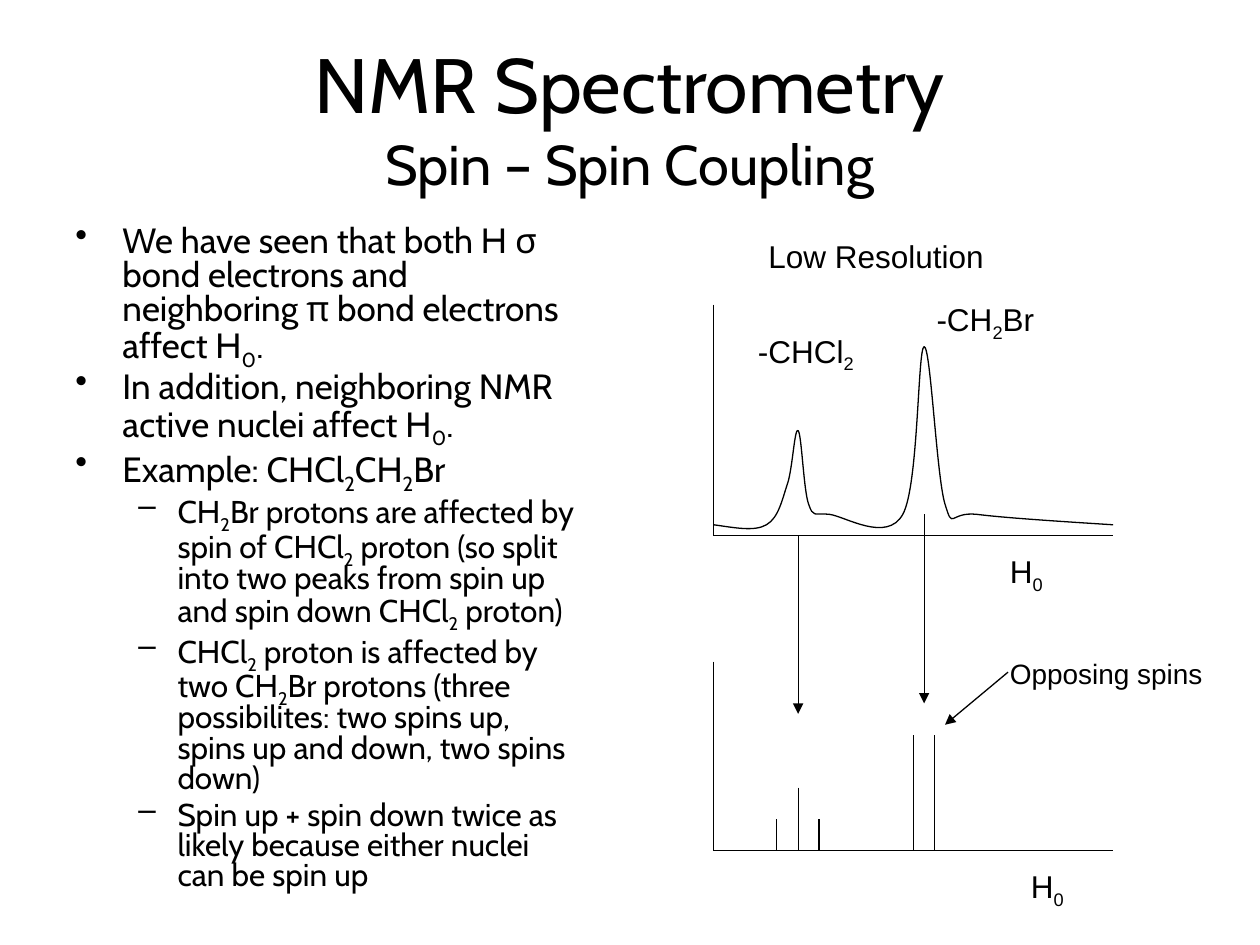
from lxml import etree
from pptx import Presentation
from pptx.dml.color import RGBColor
from pptx.enum.shapes import MSO_CONNECTOR
from pptx.enum.text import MSO_ANCHOR, PP_ALIGN
from pptx.oxml.ns import qn
from pptx.util import Cm, Pt

BLACK = RGBColor(0, 0, 0)
STRAIGHT = MSO_CONNECTOR.STRAIGHT
MIDDLE = MSO_ANCHOR.MIDDLE
CENTER = PP_ALIGN.CENTER
LINE_WIDTH = Pt(0.75)


def add_text_box(left, top, width, height):
    text_box = slide.shapes.add_textbox(Cm(left), Cm(top), Cm(width), Cm(height))
    text_box.text_frame.word_wrap = True
    return text_box.text_frame


def write_formula(paragraph, text, font_name, size):
    first, *rest = text.split("_")
    pieces = [(first, False)]
    for part in rest:
        pieces += [(part[0], True), (part[1:], False)]
    for piece, is_subscript in pieces:
        if piece:
            run = paragraph.add_run()
            run.text = piece
            run.font.name = font_name
            run.font.size = Pt(size)
            run.font.color.rgb = BLACK
            if is_subscript:
                run._r.get_or_add_rPr().set("baseline", "-25000")


presentation = Presentation()
presentation.slide_width = Cm(25.4)
presentation.slide_height = Cm(19.05)
slide = presentation.slides.add_slide(presentation.slide_layouts[6])

title_frame = add_text_box(1.27, 0.76, 22.86, 3.18)
title_frame.vertical_anchor = MIDDLE
title = title_frame.paragraphs[0]
title.text = "NMR Spectrometry\vSpin – Spin Coupling"
title.alignment = CENTER
for run, size in zip(title.runs, (44, 32)):
    run.font.name = "Cabin"
    run.font.size = Pt(size)
    run.font.color.rgb = BLACK

bullets = [
    (0, "We have seen that both H σ bond electrons and neighboring π bond electrons affect H_0."),
    (0, "In addition, neighboring NMR active nuclei affect H_0."),
    (0, "Example: CHCl_2CH_2Br"),
    (1, "CH_2Br protons are affected by spin of CHCl_2 proton "
        "(so split into two peaks from spin up and spin down CHCl_2 proton)"),
    (1, "CHCl_2 proton is affected by two CH_2Br protons "
        "(three possibilites: two spins up, spins up and down, two spins down)"),
    (1, "Spin up + spin down twice as likely because either nuclei can be spin up"),
]
bullet_styles = [("•", 20, 0.95, -0.95), ("–", 18, 2.06, -0.79)]
body_frame = add_text_box(1.27, 4.45, 10.58, 12.57)
for index, (level, text) in enumerate(bullets):
    character, size, margin, indent = bullet_styles[level]
    paragraph = body_frame.add_paragraph() if index else body_frame.paragraphs[0]
    paragraph.level = level
    paragraph.line_spacing = 0.8
    if index:
        paragraph.space_before = Pt(0.2 * size)
    properties = paragraph._p.get_or_add_pPr()
    properties.set("marL", str(Cm(margin)))
    properties.set("indent", str(Cm(indent)))
    etree.SubElement(properties, qn("a:buChar"), char=character)
    write_formula(paragraph, text, "Cabin", size)

labels = [
    ("Low Resolution", 15.24, 4.66, 6.77, 18),
    ("-CHCl_2", 15.03, 6.56, 2.75, 18),
    ("-CH_2Br", 18.63, 5.93, 2.75, 18),
    ("H_0", 20.11, 11.01, 2.12, 18),
    ("H_0", 20.53, 17.36, 2.12, 18),
    ("Opposing spins", 20.11, 13.12, 4.66, 16),
]
for text, left, top, width, size in labels:
    label_frame = add_text_box(left, top, width, 1.02)
    write_formula(label_frame.paragraphs[0], text, "Arial", size)

axis_left, axis_right = 14.39, 22.44
upper_base, lower_base = 10.8, 17.15
lines = []
for axis_top, base in ((6.14, upper_base), (13.34, lower_base)):
    lines.append((axis_left, axis_top, axis_left, base, False))
    lines.append((axis_left, base, axis_right, base, False))
split_peaks = [(15.66, 16.51), (16.09, 15.88), (16.51, 16.51), (18.42, 14.82), (18.84, 14.82)]
for x, top in split_peaks:
    lines.append((x, top, x, lower_base, False))
lines += [
    (16.09, upper_base, 16.09, 14.39, True),
    (18.63, 10.37, 18.63, 14.18, True),
    (20.32, 13.55, 19.05, 14.61, True),
]
for start_x, start_y, end_x, end_y, has_arrow in lines:
    connector = slide.shapes.add_connector(
        STRAIGHT, Cm(start_x), Cm(start_y), Cm(end_x), Cm(end_y))
    connector.line.color.rgb = BLACK
    connector.line.width = LINE_WIDTH
    if has_arrow:
        etree.SubElement(connector.line._get_or_add_ln(), qn("a:tailEnd"), type="triangle")
    etree.SubElement(connector._element.spPr, qn("a:effectLst"))

curve_start = (axis_left, 10.58)
curve_points = [
    (14.82, 10.64), (15.21, 10.72), (15.45, 10.58),
    (15.7, 10.44), (15.77, 10.06), (15.88, 9.74),
    (15.98, 9.42), (16.02, 8.61), (16.09, 8.68),
    (16.16, 8.74), (16.2, 9.88), (16.3, 10.16),
    (16.4, 10.44), (16.4, 10.34), (16.72, 10.37),
    (17.04, 10.41), (17.88, 10.95), (18.2, 10.37),
    (18.52, 9.8), (18.5, 7.01), (18.63, 6.99),
    (18.76, 6.96), (18.88, 9.6), (19.05, 10.16),
    (19.22, 10.72), (19.13, 10.31), (19.69, 10.37),
    (20.25, 10.44), (21.34, 10.51), (axis_right, 10.58),
]
builder = slide.shapes.build_freeform(Cm(curve_start[0]), Cm(curve_start[1]))
builder.add_line_segments([(Cm(x), Cm(y)) for x, y in curve_points], close=False)
spectrum = builder.convert_to_shape()
spectrum.shadow.inherit = False
spectrum.fill.background()
spectrum.line.color.rgb = BLACK
spectrum.line.width = LINE_WIDTH
outline = next(spectrum._element.iter(qn("a:path")))
segments = outline.findall(qn("a:lnTo"))
for first in range(0, len(segments), 3):
    curve = etree.SubElement(outline, qn("a:cubicBezTo"))
    for segment in segments[first:first + 3]:
        curve.append(segment[0])
        outline.remove(segment)

presentation.save("out.pptx")
